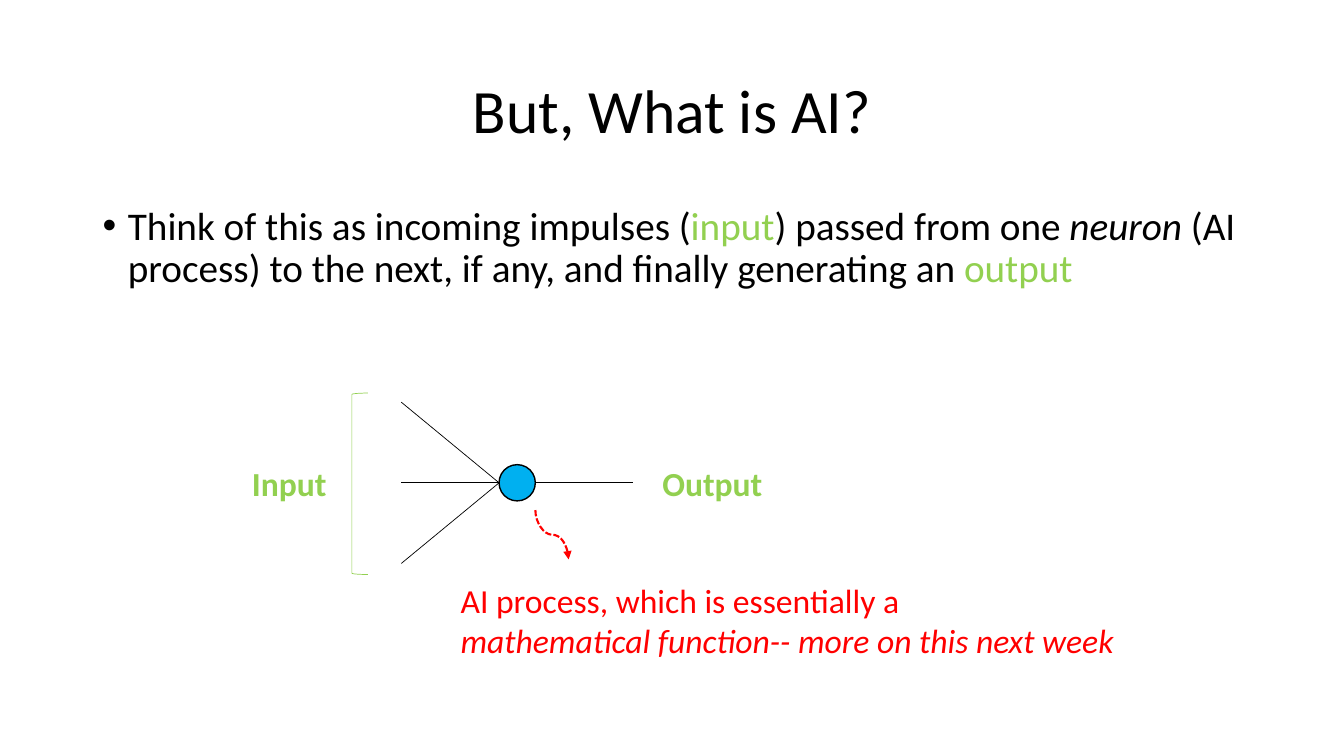
from lxml.etree import SubElement
from pptx import Presentation
from pptx.dml.color import RGBColor
from pptx.enum.dml import MSO_LINE
from pptx.enum.shapes import MSO_CONNECTOR as LINK, MSO_SHAPE as SHAPE
from pptx.enum.text import MSO_ANCHOR as ANCHOR, PP_ALIGN as ALIGN
from pptx.oxml.ns import qn
from pptx.util import Inches, Pt

# Content: each text is a list of (words, colour, style) runs
TITLE = [("But, What is AI?", "black", "")]
BODY = [
    ("Think of this as incoming impulses (", "black", ""),
    ("input", "green", ""),
    (") passed from one ", "black", ""),
    ("neuron", "black", "i"),
    (" (AI process) to the next, if any, and finally generating an ", "black", ""),
    ("output", "green", ""),
]
INPUT = [("Input", "green", "b")]
OUTPUT = [("Output", "green", "b")]
NOTE = [
    ("AI process, which is essentially a ", "red", ""),
    ("\n", "red", ""),
    ("mathematical function-- more on this next week", "red", "i"),
]
COLORS = {"black": "000000", "green": "92D050", "blue": "00B0F0", "red": "FF0000"}
FONT = "Calibri"

# Geometry in inches
W, H = 13.33, 7.5
MARGIN = 0.92
AXIS = 4.79               # height of the neuron's centre
SIZE = 0.36               # neuron diameter
NEURON_L, NEURON_R = 4.95, 4.95 + SIZE
WIRE = 0.97               # horizontal reach of each wire
SPREAD = 0.8              # vertical gap between input wires
BRACKET_H = 1.8
LABEL_H = 0.5


def rgb(name):
    return RGBColor.from_string(COLORS[name])


def add_text(slide, runs, box, size=24, align=ALIGN.LEFT, anchor=ANCHOR.TOP,
             wrap=False, spacing=None, before=None, bullet=None):
    tf = slide.shapes.add_textbox(*map(Inches, box)).text_frame
    tf.word_wrap = wrap
    tf.vertical_anchor = anchor
    p = tf.paragraphs[0]
    p.alignment = align
    p.line_spacing = spacing
    if before:
        p.space_before = Pt(before)
    if bullet:
        pPr = p._p.get_or_add_pPr()
        pPr.set("marL", str(Inches(0.25)))
        pPr.set("indent", str(Inches(-0.25)))
        SubElement(pPr, qn("a:buFont")).set("typeface", "Arial")
        SubElement(pPr, qn("a:buChar")).set("char", bullet)
    for words, color, style in runs:
        if words == "\n":
            p.add_line_break()
            continue
        r = p.add_run()
        r.text = words
        r.font.name, r.font.size = FONT, Pt(size)
        r.font.bold, r.font.italic = "b" in style, "i" in style
        r.font.color.rgb = rgb(color)


def add_shape(slide, kind, box, line, width, fill=None):
    sp = slide.shapes.add_shape(kind, *map(Inches, box))
    sp.shadow.inherit = False
    if fill:
        sp.fill.solid()
        sp.fill.fore_color.rgb = rgb(fill)
    else:
        sp.fill.background()
    sp.line.color.rgb = rgb(line)
    sp.line.width = Pt(width)


def add_link(slide, kind, ends, color="black", width=0.5):
    cx = slide.shapes.add_connector(kind, *map(Inches, ends))
    cx.line.color.rgb = rgb(color)
    cx.line.width = Pt(width)
    SubElement(cx._element.spPr, qn("a:effectLst"))
    return cx


def main():
    prs = Presentation()
    prs.slide_width, prs.slide_height = Inches(W), Inches(H)
    slide = prs.slides.add_slide(prs.slide_layouts[6])

    # Title and statement
    add_text(slide, TITLE, (MARGIN, 0.4, W - 2 * MARGIN, 1.45), size=44, wrap=True,
             align=ALIGN.CENTER, anchor=ANCHOR.MIDDLE, spacing=0.9)
    add_text(slide, BODY, (MARGIN, 2, 11.65, 1.24), size=28, wrap=True,
             spacing=0.9, before=10, bullet="•")

    # Labels and bracket, level with the neuron
    label_top = AXIS - LABEL_H / 2
    add_text(slide, INPUT, (2.4, label_top, 0.95, LABEL_H))
    add_text(slide, OUTPUT, (6.47, label_top, 1.21, LABEL_H))
    add_text(slide, NOTE, (4.47, 5.7, 6.86, 0.91))
    add_shape(slide, SHAPE.LEFT_BRACKET,
              (3.49, AXIS - BRACKET_H / 2 + 0.01, 0.16, BRACKET_H), "green", 0.5)

    # Neuron with three wires in and one out
    add_shape(slide, SHAPE.OVAL, (NEURON_L, AXIS - SIZE / 2, SIZE, SIZE),
              "black", 1, fill="blue")
    for step in (-1, 0, 1):
        add_link(slide, LINK.STRAIGHT,
                 (NEURON_L - WIRE, AXIS + step * SPREAD, NEURON_L, AXIS))
    add_link(slide, LINK.STRAIGHT, (NEURON_R, AXIS, NEURON_R + WIRE, AXIS))

    # Dashed curve to the note: drawn mirrored, then turned to run downwards
    run, drop = 0.33, 0.49
    mid_x, mid_y = NEURON_R + run / 2, 5.06 + drop / 2
    curve = add_link(slide, LINK.CURVE,
                     (mid_x + drop / 2, mid_y - run / 2, mid_x - drop / 2, mid_y + run / 2),
                     color="red", width=1.5)
    curve._element.spPr.find(qn("a:xfrm")).set("rot", str(270 * 60000))
    curve.line.dash_style = MSO_LINE.SQUARE_DOT
    SubElement(curve.line._get_or_add_ln(), qn("a:tailEnd")).set("type", "triangle")

    prs.save("out.pptx")


if __name__ == "__main__":
    main()
